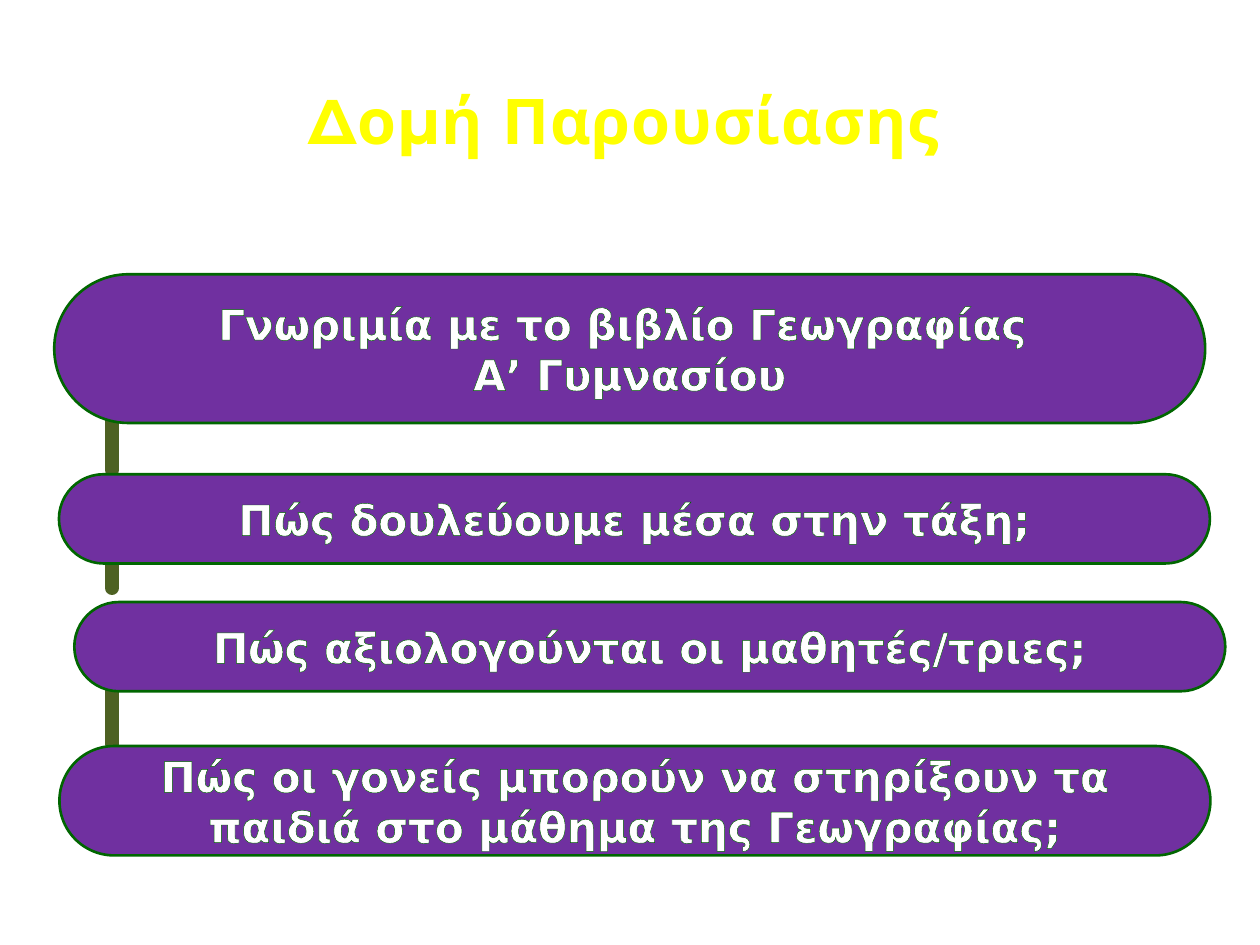
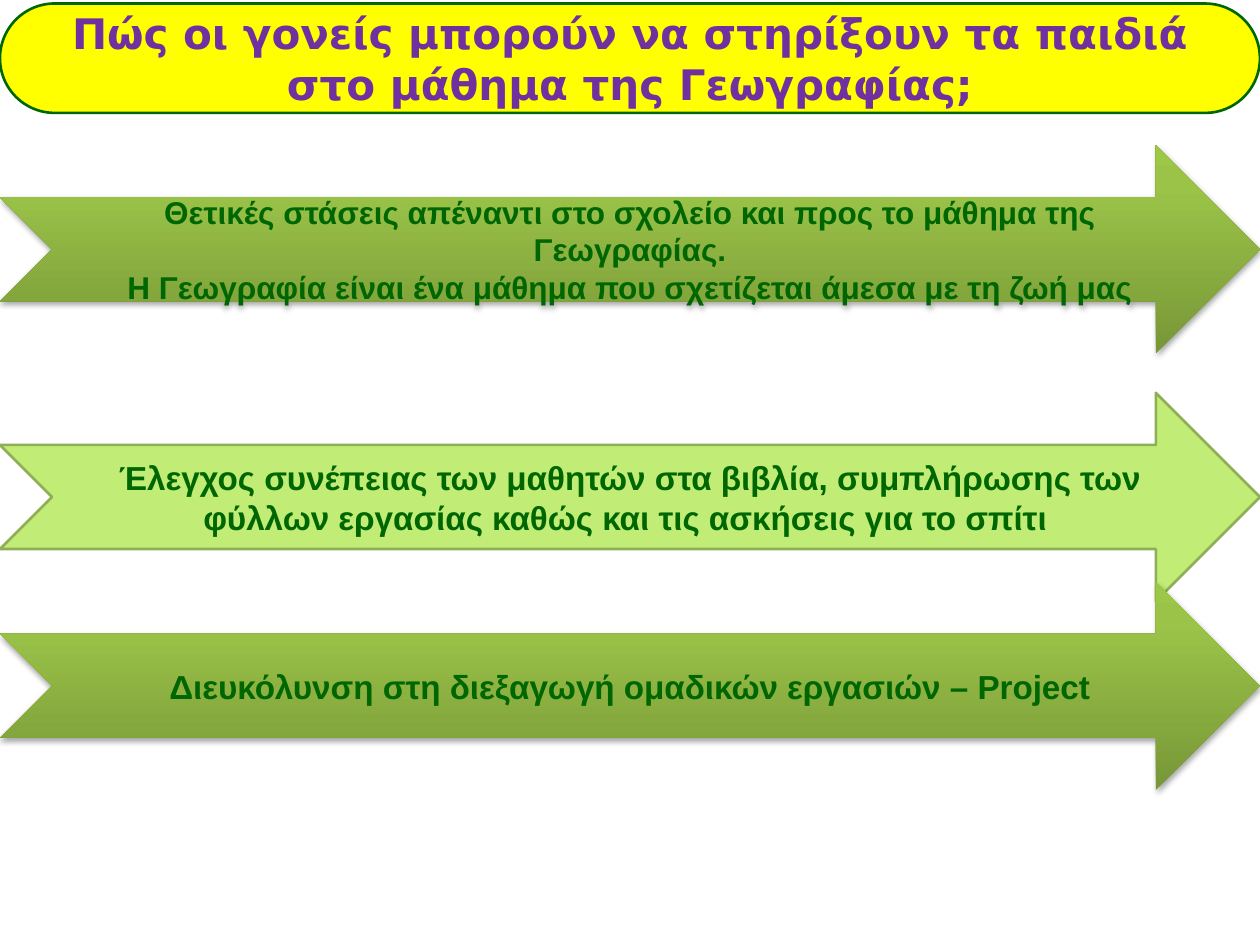
from copy import deepcopy

from lxml import etree
from pptx import Presentation
from pptx.dml.color import RGBColor
from pptx.enum import shapes, text
from pptx.oxml.ns import qn
from pptx.util import Pt

COLORS = {
    "purple": "7030A0",
    "yellow": "FFFF00",
    "white": "FFFFFF",
    "green": "006600",
    "rail": "4D6122",
    "title_edge": "77933C",
    "title_edge_dark": "4F6228",
    "lime": "C1EC76",
    "lime_edge": "8FAF57",
    "shadow": "000000",
}
ARROW_GRADIENT = [(0, "779737"), (0.8, "9BC348"), (1, "9DC746")]
PARENTS = "Πώς οι γονείς μπορούν να στηρίξουν τα παιδιά στο μάθημα της Γεωγραφίας;"
PAGE_WIDTH, PAGE_HEIGHT = 720, 540


def rgb(name):
    return RGBColor.from_string(COLORS[name])


def add_color(parent, name):
    return etree.SubElement(parent, qn("a:srgbClr"), val=COLORS[name])


def add_span(para, words, font, size, color, edge=None, edge_width=1, spacing=None):
    """Add one bold run, with an optional outline and letter spacing."""
    span = para.add_run()
    span.text = words
    span.font.name, span.font.size, span.font.bold = font, Pt(size), True
    span.font.color.rgb = rgb(color)
    props = span.font._element
    if spacing:
        props.set("spc", str(int(spacing * 100)))
    if edge:
        line = etree.Element(qn("a:ln"), w=str(Pt(edge_width)))
        add_color(etree.SubElement(line, qn("a:solidFill")), edge)
        props.insert(0, line)


def write(shape, paragraphs, **style):
    """Centre the paragraphs in a shape, all in one style."""
    frame = shape.text_frame
    frame.word_wrap = True
    frame.vertical_anchor = text.MSO_ANCHOR.MIDDLE
    for index, words in enumerate(paragraphs):
        para = frame.paragraphs[0] if index == 0 else frame.add_paragraph()
        para.alignment = text.PP_ALIGN.CENTER
        add_span(para, words, **style)


def add_block(page, kind, box, fill=None, edge=None):
    shape = page.shapes.add_shape(kind, *map(Pt, box))
    shape.shadow.inherit = False
    if fill:
        shape.fill.solid()
        shape.fill.fore_color.rgb = rgb(fill)
    if edge:
        shape.line.color.rgb = rgb(edge)
        shape.line.width = Pt(1.5)
    else:
        shape.line.fill.background()
    return shape


def add_pill(page, box, paragraphs, fill="purple", color="white"):
    pill = add_block(page, shapes.MSO_SHAPE.ROUNDED_RECTANGLE, box, fill, "green")
    pill.adjustments[0] = 0.5
    write(pill, paragraphs, font="DejaVu Sans", size=24, color=color, edge="green")


def shade(shape):
    """Give a shape the upward green gradient and a soft shadow."""
    shape.fill.gradient()
    shape.fill.gradient_angle = 90
    stop_list = shape.element.spPr.find(qn("a:gradFill")).find(qn("a:gsLst"))
    stop_list.insert(1, deepcopy(stop_list[0]))
    for stop, (position, color) in zip(shape.fill.gradient_stops, ARROW_GRADIENT):
        stop.color.rgb = RGBColor.from_string(color)
        stop.position = position
    effects = shape.element.spPr.find(qn("a:effectLst"))
    shadow = etree.SubElement(effects, qn("a:outerShdw"), blurRad=str(Pt(3.1)),
                              dist=str(Pt(1.8)), dir="5400000", rotWithShape="0")
    etree.SubElement(add_color(shadow, "shadow"), qn("a:alpha"), val="35000")


def add_arrow(page, box, paragraphs, size, plain=False):
    kind = shapes.MSO_SHAPE.NOTCHED_RIGHT_ARROW
    if plain:
        arrow = add_block(page, kind, box, "lime", "lime_edge")
    else:
        arrow = add_block(page, kind, box)
        shade(arrow)
    write(arrow, paragraphs, font="Arial", size=size, color="green")


def add_rail(page, x, top, bottom):
    rail = page.shapes.add_connector(
        shapes.MSO_CONNECTOR.STRAIGHT, Pt(x), Pt(top), Pt(x), Pt(bottom))
    rail.line.color.rgb = rgb("rail")
    rail.line.width = Pt(8)
    rail.line._get_or_add_ln().set("cap", "rnd")
    etree.SubElement(rail.element.spPr, qn("a:effectLst"))


def add_title(page, box):
    title = page.shapes.add_textbox(*map(Pt, box))
    title.text_frame.word_wrap = False
    title.text_frame.auto_size = text.MSO_AUTO_SIZE.SHAPE_TO_FIT_TEXT
    para = title.text_frame.paragraphs[0]
    para.alignment = text.PP_ALIGN.CENTER
    for words, edge in (("Δομή ", "title_edge"), ("Παρουσίασης", "title_edge_dark")):
        add_span(para, words, "Montserrat", 36, "yellow", edge, 0.9, 0.5)


def build_outline(page):
    # Rail segments behind the pills
    for top, bottom in ((290, 336), (381, 425), (214, 268.5)):
        add_rail(page, 64, top, bottom)
    add_title(page, (157.7, 43.2, 397.4, 51))
    # Topics: left, top, height, paragraphs
    topics = [
        (31, 156.7, 85, ["Γνωριμία με το βιβλίο Γεωγραφίας ", "Α’ Γυμνασίου"]),
        (33.7, 271, 51, ["Πώς δουλεύουμε μέσα στην τάξη;"]),
        (42.5, 344, 51, ["Πώς αξιολογούνται οι μαθητές/τριες;"]),
        (34, 426.3, 62.5, [PARENTS]),
    ]
    for left, top, height, paragraphs in topics:
        add_pill(page, (left, top, 657.7, height), paragraphs)


def build_parents(page):
    # Arrows: top, text size, flat fill, paragraphs
    arrows = [
        (83, 18, False, [
            "Θετικές στάσεις απέναντι στο σχολείο και προς το μάθημα της Γεωγραφίας.",
            "Η Γεωγραφία είναι ένα μάθημα που σχετίζεται άμεσα με τη ζωή μας"]),
        (224.5, 19, True, [
            "Έλεγχος συνέπειας των μαθητών στα βιβλία, συμπλήρωσης των "
            "φύλλων εργασίας καθώς και τις ασκήσεις για το σπίτι "]),
        (332.5, 19, False, ["Διευκόλυνση στη διεξαγωγή ομαδικών εργασιών – Project"]),
    ]
    for top, size, plain, paragraphs in arrows:
        add_arrow(page, (0, top, PAGE_WIDTH, 119), paragraphs, size, plain)
    # Heading
    add_pill(page, (0, 2, PAGE_WIDTH, 62.5), [PARENTS], "yellow", "purple")


def main():
    deck = Presentation()
    deck.slide_width, deck.slide_height = Pt(PAGE_WIDTH), Pt(PAGE_HEIGHT)
    for build in (build_outline, build_parents):
        page = deck.slides.add_slide(deck.slide_layouts[6])
        page.background.fill.solid()
        page.background.fill.fore_color.rgb = rgb("white")
        build(page)
    deck.save("out.pptx")


if __name__ == "__main__":
    main()
